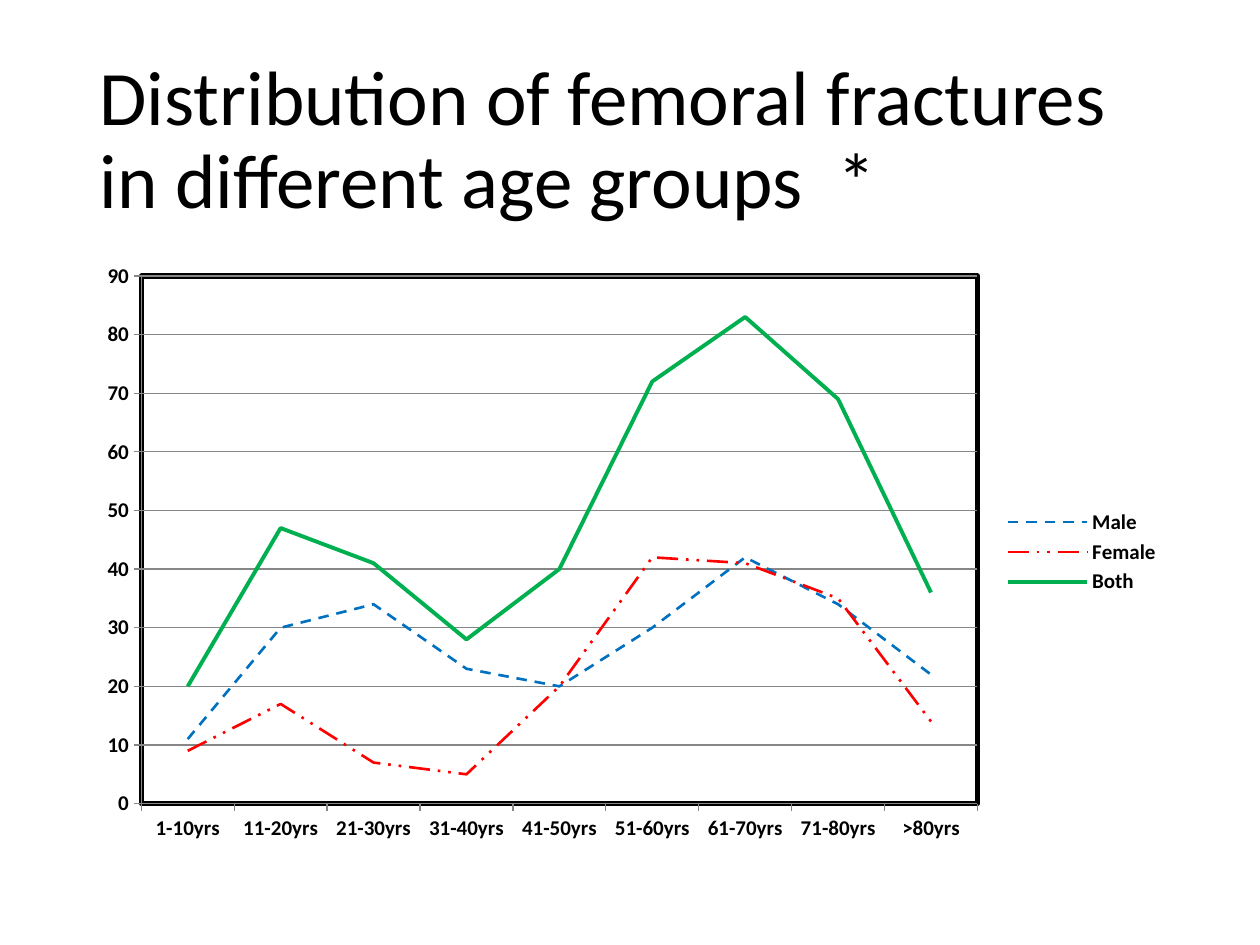
import pptx
import pptx.util
import pptx.chart.data
import pptx.dml.color
import pptx.enum.chart
import pptx.enum.dml
import pptx.enum.text
import pptx.oxml
import pptx.oxml.ns

Inches = pptx.util.Inches
Pt = pptx.util.Pt
RGBColor = pptx.dml.color.RGBColor
Dash = pptx.enum.dml.MSO_LINE

BLACK = RGBColor(0x00, 0x00, 0x00)
GRAY = RGBColor(0x86, 0x86, 0x86)
BLUE = RGBColor(0x00, 0x70, 0xC0)
RED = RGBColor(0xFF, 0x00, 0x00)
GREEN = RGBColor(0x00, 0xB0, 0x50)

AGES = ["1-10yrs", "11-20yrs", "21-30yrs", "31-40yrs", "41-50yrs",
        "51-60yrs", "61-70yrs", "71-80yrs", ">80yrs"]
GROUPS = [
    ("Male", [11, 30, 34, 23, 20, 30, 42, 34, 22], BLUE, 1.5, Dash.DASH),
    ("Female", [9, 17, 7, 5, 20, 42, 41, 35, 14], RED, 1.5,
     Dash.DASH_DOT_DOT),
    ("Both", [20, 47, 41, 28, 40, 72, 83, 69, 36], GREEN, 2.25, Dash.SOLID),
]

prs = pptx.Presentation()
prs.slide_width = Inches(10)
prs.slide_height = Inches(7.5)
slide = prs.slides.add_slide(prs.slide_layouts[5])

# Title
title = slide.shapes.title
title.left, title.top = Inches(0.69), Inches(0.4)
title.width, title.height = Inches(8.62), Inches(1.45)
frame = title.text_frame
frame.text = "Distribution of femoral fractures in different age groups  *"
frame.vertical_anchor = pptx.enum.text.MSO_ANCHOR.MIDDLE
para = frame.paragraphs[0]
para.alignment = pptx.enum.text.PP_ALIGN.LEFT
para.line_spacing = 0.9
para.font.name = "Calibri"
para.font.size = Pt(44)
para.font.color.rgb = BLACK

# Line chart
data = pptx.chart.data.CategoryChartData()
data.categories = AGES
for name, counts, *_ in GROUPS:
    data.add_series(name, counts)
chart = slide.shapes.add_chart(
    pptx.enum.chart.XL_CHART_TYPE.LINE, Inches(0.69), Inches(2),
    Inches(8.62), Inches(4.76), data).chart
chart.has_title = False
chart.font.name = "Calibri"
chart.font.size = Pt(12)
chart.font.bold = True
chart.font.color.rgb = BLACK

chart.has_legend = True
chart.legend.position = pptx.enum.chart.XL_LEGEND_POSITION.RIGHT
chart.legend.include_in_layout = False

for line, (_, _, color, width, dash) in zip(chart.plots[0].series, GROUPS):
    line.smooth = False
    line.marker.style = pptx.enum.chart.XL_MARKER_STYLE.NONE
    line.format.line.color.rgb = color
    line.format.line.width = Pt(width)
    line.format.line.dash_style = dash

scale = chart.value_axis
scale.minimum_scale, scale.maximum_scale = 0, 90
scale.major_unit = 10
scale.has_major_gridlines = True
for part in (scale, chart.category_axis, scale.major_gridlines):
    part.format.line.color.rgb = GRAY
    part.format.line.width = Pt(0.75)
for axis in (scale, chart.category_axis):
    axis.major_tick_mark = pptx.enum.chart.XL_TICK_MARK.OUTSIDE

# Plot area: fixed place and a heavy black frame
names = pptx.oxml.ns.nsdecls("c", "a")
area = chart.plots[0]._element.getparent()
for old in area.findall(pptx.oxml.ns.qn("c:layout")):
    area.remove(old)
area.insert(0, pptx.oxml.parse_xml(
    f'<c:layout {names}><c:manualLayout><c:layoutTarget val="inner"/>'
    '<c:xMode val="edge"/><c:yMode val="edge"/>'
    '<c:x val="0.05"/><c:y val="0.04"/><c:w val="0.77"/><c:h val="0.88"/>'
    '</c:manualLayout></c:layout>'))
area.append(pptx.oxml.parse_xml(
    f'<c:spPr {names}><a:noFill/><a:ln w="{Pt(3)}"><a:solidFill>'
    f'<a:srgbClr val="{BLACK}"/></a:solidFill></a:ln></c:spPr>'))

prs.save("out.pptx")
